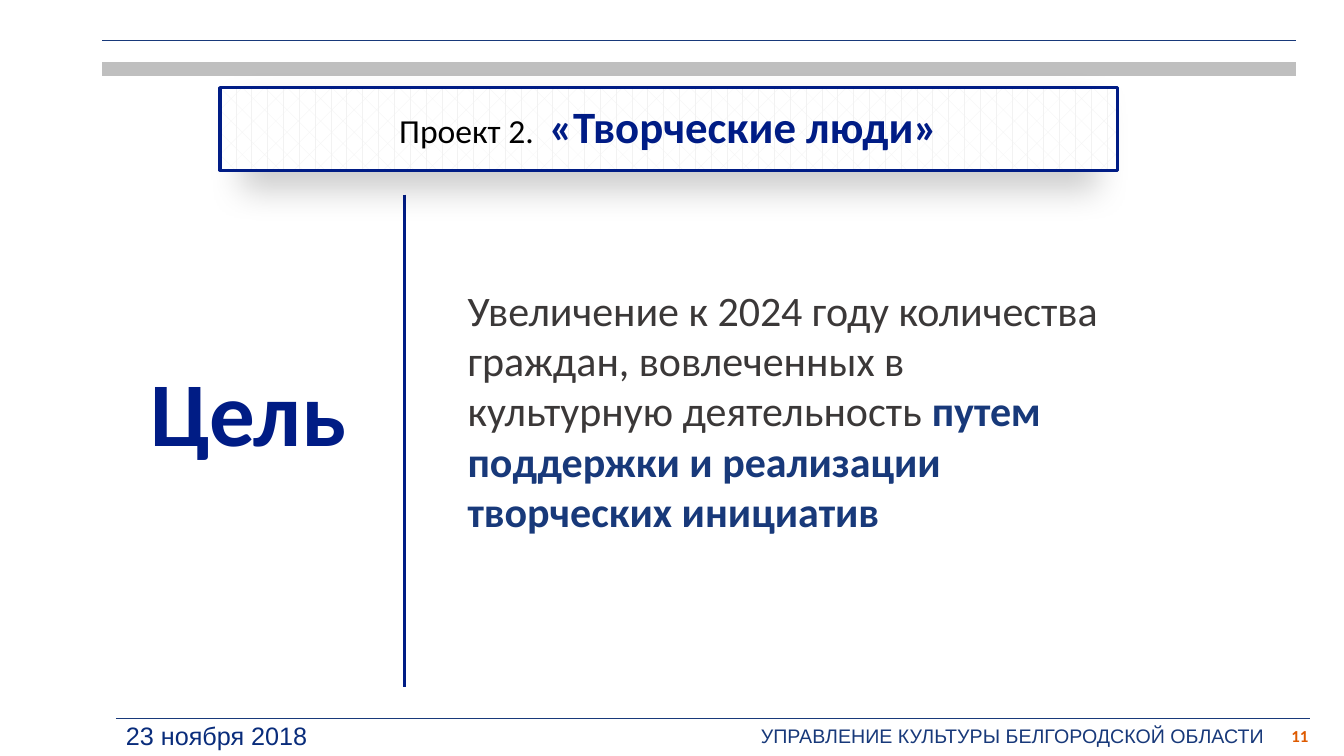
import pptx
import pptx.util
import pptx.dml.color
import pptx.enum.dml
import pptx.enum.shapes
import pptx.enum.text
import pptx.oxml
import pptx.oxml.ns

Pt = pptx.util.Pt
RGB = pptx.dml.color.RGBColor
ALIGN = pptx.enum.text.PP_ALIGN
ANCHOR = pptx.enum.text.MSO_ANCHOR
FIT = pptx.enum.text.MSO_AUTO_SIZE

NAVY = RGB(0x00, 0x1C, 0x85)
BLUE = RGB(0x18, 0x39, 0x7A)
DEEP = RGB(0x09, 0x2C, 0x7B)
ORANGE = RGB(0xDE, 0x5A, 0x00)
DARK = RGB(0x3B, 0x38, 0x38)
BLACK = RGB(0, 0, 0)
GREY = RGB(0xBF, 0xBF, 0xBF)
PALE = RGB(0xF2, 0xF2, 0xF2)
WHITE = RGB(0xFF, 0xFF, 0xFF)

# start x, start y, end x, end y, colour, width
RULES = [
    (72.9, 28.8, 925.9, 28.8, BLUE, 1),
    (72.9, 49.2, 925.9, 49.2, GREY, 10),
    (82.8, 513.2, 935.8, 513.2, BLUE, 1),
    (289, 139, 289, 491, NAVY, 2.25),
]

# runs: text, font, size, colour, bold
TITLE = [
    ("Проект 2.  ", "Calibri", 24, BLACK, False),
    ("«Творческие люди»", "Calibri", 32, NAVY, True),
]
TITLE_BOX = (157.2, 62.6, 640.8, 59)

# box, wrap, grow, anchor, alignment, runs
TEXTS = [
    ((536.4, 513.2, 377.3, 24.5), False, True, ANCHOR.TOP, ALIGN.LEFT,
     [("УПРАВЛЕНИЕ КУЛЬТУРЫ БЕЛГОРОДСКОЙ ОБЛАСТИ", "Arial", 14, BLUE, False)]),
    ((913.7, 511.2, 28, 28.8), True, False, ANCHOR.MIDDLE, ALIGN.RIGHT,
     [("11", "Calibri", 12, ORANGE, True)]),
    ((82.8, 511.2, 145.4, 28.8), False, True, ANCHOR.TOP, ALIGN.LEFT,
     [("23 ноября 2018", "Arial", 18, DEEP, False)]),
    ((100.1, 250.6, 156.2, 85.7), False, True, ANCHOR.TOP, ALIGN.LEFT,
     [("Цель", "Calibri", 65, NAVY, True)]),
    ((326.9, 199.4, 466.6, 189.4), True, True, ANCHOR.TOP, ALIGN.LEFT,
     [("Увеличение к 2024 году количества граждан, вовлеченных в "
       "культурную деятельность ", "Calibri", 30, DARK, False),
      ("путем поддержки и реализации творческих инициатив",
       "Calibri", 30, BLUE, True)]),
]

SHADOW = (
    '<a:effectLst %s><a:outerShdw blurRad="%d" dist="%d" dir="5400000" '
    'sx="95000" algn="ctr" rotWithShape="0"><a:srgbClr val="000000">'
    '<a:alpha val="20000"/></a:srgbClr></a:outerShdw></a:effectLst>'
    % (pptx.oxml.ns.nsdecls("a"), Pt(24), Pt(12)))
FLAT = "<a:effectLst %s/>" % pptx.oxml.ns.nsdecls("a")


def points(vals):
    return [Pt(v) for v in vals]


def add_fx(shape, xml):
    """Append an effect list to the shape's properties."""
    shape._element.spPr.append(pptx.oxml.parse_xml(xml))


def add_rule(slide, x1, y1, x2, y2, color, width):
    rule = slide.shapes.add_connector(
        pptx.enum.shapes.MSO_CONNECTOR.STRAIGHT, *points((x1, y1, x2, y2)))
    rule.line.color.rgb = color
    rule.line.width = Pt(width)
    add_fx(rule, FLAT)


def write(par, runs):
    for text, font, size, color, bold in runs:
        run = par.add_run()
        run.text = text
        run.font.name = font
        run.font.size = Pt(size)
        run.font.bold = bold
        run.font.color.rgb = color


def add_text(slide, box, wrap, grow, anchor, align, runs):
    frame = slide.shapes.add_textbox(*points(box)).text_frame
    frame.word_wrap = wrap
    frame.auto_size = FIT.SHAPE_TO_FIT_TEXT if grow else FIT.NONE
    frame.vertical_anchor = anchor
    par = frame.paragraphs[0]
    par.alignment = align
    write(par, runs)


def add_title(slide):
    title = slide.shapes.add_shape(
        pptx.enum.shapes.MSO_SHAPE.RECTANGLE, *points(TITLE_BOX))
    title.fill.patterned()
    title.fill.pattern = pptx.enum.dml.MSO_PATTERN.DIVOT
    title.fill.fore_color.rgb = PALE
    title.fill.back_color.rgb = WHITE
    title.line.color.rgb = NAVY
    title.line.width = Pt(2.25)
    add_fx(title, SHADOW)
    frame = title.text_frame
    frame.word_wrap = True
    frame.vertical_anchor = ANCHOR.MIDDLE
    frame.margin_left = frame.margin_right = Pt(9.6)
    frame.margin_top = frame.margin_bottom = Pt(9.6)
    par = frame.paragraphs[0]
    par.alignment = ALIGN.CENTER
    par.line_spacing = 0.9
    write(par, TITLE)


def main():
    deck = pptx.Presentation()
    deck.slide_width, deck.slide_height = Pt(960), Pt(540)
    slide = deck.slides.add_slide(deck.slide_layouts[6])
    for rule in RULES:
        add_rule(slide, *rule)
    add_title(slide)
    for text in TEXTS:
        add_text(slide, *text)
    deck.save("out.pptx")


if __name__ == "__main__":
    main()
